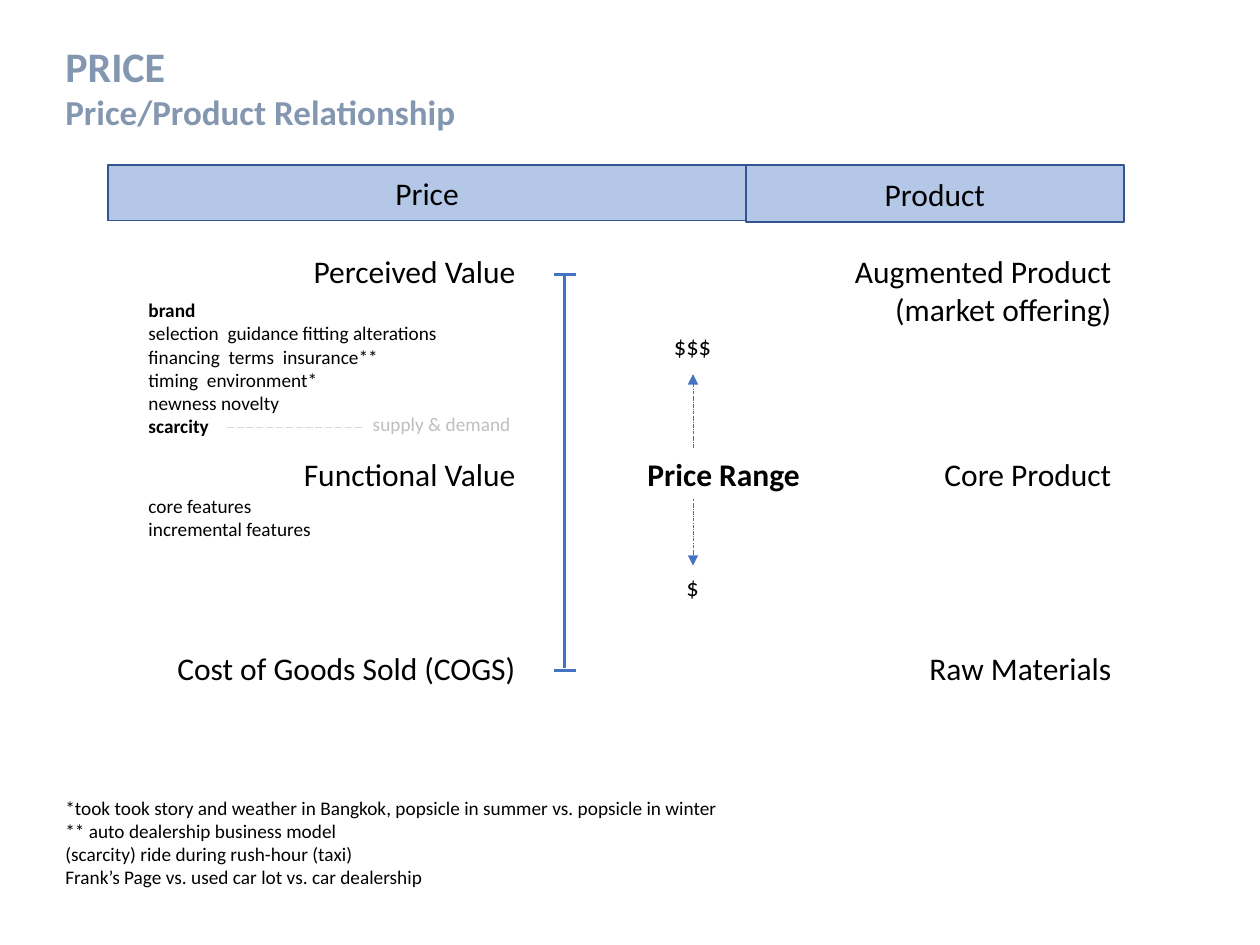
from pptx import Presentation
from pptx.dml.color import RGBColor
from pptx.enum.dml import MSO_LINE
from pptx.enum.shapes import MSO_CONNECTOR, MSO_SHAPE
from pptx.enum.text import MSO_ANCHOR, PP_ALIGN
from pptx.oxml.ns import qn
from pptx.util import Inches, Pt
from lxml.etree import SubElement

prs = Presentation()
prs.slide_width, prs.slide_height = Inches(10), Inches(7.5)
slide = prs.slides.add_slide(prs.slide_layouts[6])
color = RGBColor.from_string


def add_text(box, lines, size, ink="000000", align=PP_ALIGN.LEFT, wrap=True):
    """Write one paragraph per (text, bold) pair; size is one value or one per line."""
    frame = box.text_frame
    frame.word_wrap = wrap
    sizes = size if isinstance(size, list) else [size] * len(lines)
    for i, ((text, bold), points) in enumerate(zip(lines, sizes)):
        paragraph = frame.paragraphs[0] if i == 0 else frame.add_paragraph()
        paragraph.alignment = align
        run = paragraph.add_run()
        run.text = text
        run.font.name = "Calibri"
        run.font.size = Pt(points)
        run.font.bold = bold
        run.font.color.rgb = color(ink)


def add_line(x1, y1, x2, y2, ink, width, dash=None):
    line = slide.shapes.add_connector(
        MSO_CONNECTOR.STRAIGHT, Inches(x1), Inches(y1), Inches(x2), Inches(y2))
    line.line.color.rgb = color(ink)
    line.line.width = Pt(width)
    if dash:
        line.line.dash_style = dash
    SubElement(line._element.spPr, qn("a:effectLst"))
    return line


# Column headers
for heading, left, width, height in [("Product", 5.92, 3, 0.45), ("Price", 0.86, 5.06, 0.44)]:
    header = slide.shapes.add_shape(
        MSO_SHAPE.RECTANGLE, Inches(left), Inches(1.31), Inches(width), Inches(height))
    header.shadow.inherit = False
    header.fill.solid()
    header.fill.fore_color.rgb = color("B4C7E7")
    header.line.color.rgb = color("325491")
    header.line.width = Pt(1)
    header.text_frame.vertical_anchor = MSO_ANCHOR.MIDDLE
    add_text(header, [(heading, False)], 18, align=PP_ALIGN.CENTER)

# Title
title = slide.shapes.add_textbox(Inches(0.42), Inches(0.27), Inches(4.22), Inches(0.84))
add_text(title, [("PRICE", True), ("Price/Product Relationship", True)], [24, 20], "8497B0")

# Value levels and the product levels they match, flush right in their columns
price_right, product_right = 4.19, 8.92
levels = [
    (price_right, 1.95, 1.82, 0.4, ["Perceived Value"]),
    (price_right, 3.56, 1.9, 0.4, ["Functional Value"]),
    (price_right, 5.1, 2.92, 0.4, ["Cost of Goods Sold (COGS)"]),
    (product_right, 1.95, 2.26, 0.71, ["Augmented Product", "(market offering)"]),
    (product_right, 3.56, 1.54, 0.4, ["Core Product"]),
    (product_right, 5.1, 1.66, 0.4, ["Raw Materials"]),
]
for right, top, width, height, lines in levels:
    level = slide.shapes.add_textbox(
        Inches(right - width), Inches(top), Inches(width), Inches(height))
    add_text(level, [(line, False) for line in lines], 18, align=PP_ALIGN.RIGHT, wrap=False)

# Span from cost to perceived value
add_line(4.48, 2.18, 4.48, 5.3, "4472C4", 1.5)
for cap_y in (2.18, 5.32):
    add_line(4.4, cap_y, 4.57, cap_y, "4472C4", 1.5)

# Price range: the arrow runs behind its labels
range_arrow = add_line(5.5, 2.97, 5.5, 4.49, "4472C4", 0.25, MSO_LINE.LONG_DASH_DOT)
outline = range_arrow.line._get_or_add_ln()
for end in ("a:headEnd", "a:tailEnd"):
    SubElement(outline, qn(end), type="triangle")

for label, left, top, width, height, size, bold in [
    ("Price Range", 5.04, 3.56, 1.42, 0.4, 18, True),
    ("$$$", 5.25, 2.57, 0.5, 0.34, 14, False),
    ("$", 5.35, 4.49, 0.3, 0.34, 14, False),
]:
    range_label = slide.shapes.add_shape(
        MSO_SHAPE.RECTANGLE, Inches(left), Inches(top), Inches(width), Inches(height))
    range_label.shadow.inherit = False
    range_label.fill.solid()
    range_label.fill.fore_color.rgb = color("FFFFFF")
    range_label.line.fill.background()
    add_text(range_label, [(label, bold)], size, wrap=False)
    if label == "$":
        range_arrow.end_connect(range_label, 0)

# Value drivers and footnotes
notes = [
    (1.08, 2.32, 2.92, 1.21, [
        ("brand", True),
        ("selection  guidance fitting alterations", False),
        ("financing  terms  insurance**", False),
        ("timing  environment*", False),
        ("newness novelty", False),
        ("scarcity", True),
    ]),
    (1.08, 3.87, 2.92, 0.47, [("core features", False), ("incremental features", False)]),
    (0.42, 6.27, 8.86, 0.84, [
        ("*took took story and weather in Bangkok, popsicle in summer vs. popsicle in winter", False),
        ("** auto dealership business model", False),
        ("(scarcity) ride during rush-hour (taxi)", False),
        ("Frank’s Page vs. used car lot vs. car dealership", False),
    ]),
]
for left, top, width, height, lines in notes:
    note = slide.shapes.add_textbox(Inches(left), Inches(top), Inches(width), Inches(height))
    add_text(note, lines, 11)

# Scarcity leads to supply and demand
supply = slide.shapes.add_textbox(Inches(2.86), Inches(3.22), Inches(1.39), Inches(0.29))
add_text(supply, [("supply & demand", False)], 11, "BFBFBF")
add_line(1.8, 3.39, 2.87, 3.39, "D9D9D9", 0.5, MSO_LINE.LONG_DASH)

prs.save("out.pptx")
